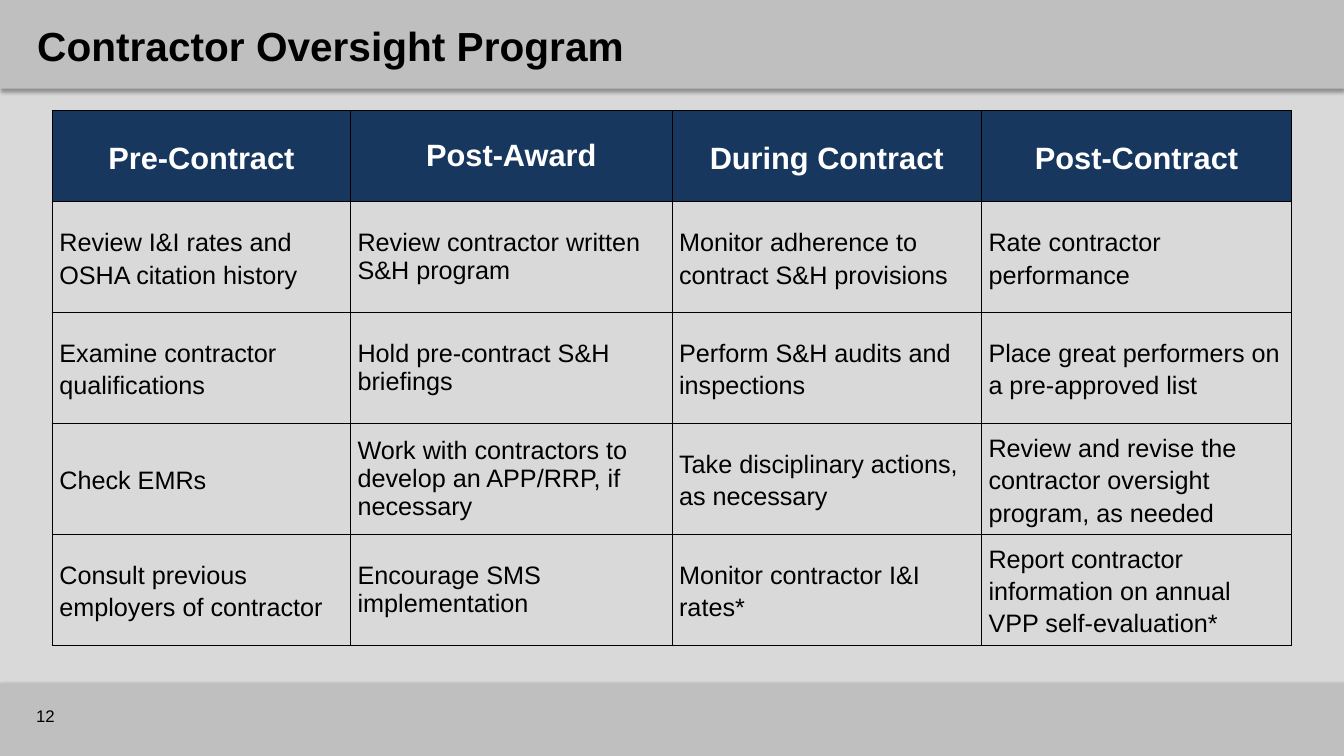
from dataclasses import dataclass
from typing import Any

from lxml import etree
from pptx import Presentation
from pptx.dml.color import RGBColor
from pptx.enum.shapes import MSO_SHAPE
from pptx.enum.text import MSO_ANCHOR, PP_ALIGN
from pptx.oxml import parse_xml
from pptx.oxml.ns import nsdecls, qn
from pptx.util import Pt

RECTANGLE = MSO_SHAPE.RECTANGLE
MIDDLE = MSO_ANCHOR.MIDDLE
LEFT = PP_ALIGN.LEFT
CENTER = PP_ALIGN.CENTER


@dataclass(frozen=True)
class Theme:
    font: str = "Arial"
    page: str = "D9D9D9"
    band: str = "BFBFBF"
    header: str = "17375E"
    ink: str = "000000"
    header_ink: str = "FFFFFF"
    title_size: float = 29
    header_size: float = 22
    body_size: float = 18
    number_size: float = 12


@dataclass(frozen=True)
class Box:
    left: float
    top: float
    width: float
    height: float

    def lengths(self) -> tuple[int, int, int, int]:
        return Pt(self.left), Pt(self.top), Pt(self.width), Pt(self.height)


@dataclass(frozen=True)
class Phase:
    name: str
    width: float
    line_spacing: float
    steps: tuple[str, ...]


THEME = Theme()
PAGE_WIDTH, PAGE_HEIGHT = 960, 540
HEADER_HEIGHT, STEP_HEIGHT = 64.8, 79.2
BORDER_WIDTH = 1
CELL_INSET = 5.04

BANDS = (Box(0, 488.2, PAGE_WIDTH, 51.8), Box(0, 0, PAGE_WIDTH, 63.4))
TITLE_BOX = Box(19.4, 10.1, 931, 44.6)
NUMBER_BOX = Box(18.7, 496.8, 72, 28.8)
TABLE_LEFT, TABLE_TOP = 37.4, 79.2

PHASES = (
    Phase("Pre-Contract", 213, 1.15, (
        "Review I&I rates and OSHA citation history",
        "Examine contractor qualifications",
        "Check EMRs",
        "Consult previous employers of contractor",
    )),
    Phase("Post-Award", 229.7, 1.0, (
        "Review contractor written S&H program",
        "Hold pre-contract S&H briefings",
        "Work with contractors to develop an APP/RRP, if necessary",
        "Encourage SMS implementation",
    )),
    Phase("During Contract", 221, 1.15, (
        "Monitor adherence to contract S&H provisions",
        "Perform S&H audits and inspections",
        "Take disciplinary actions, as necessary",
        "Monitor contractor I&I rates*",
    )),
    Phase("Post-Contract", 221.6, 1.15, (
        "Rate contractor performance",
        "Place great performers on a pre-approved list",
        "Review and revise the contractor oversight program, as needed",
        "Report contractor information on annual VPP self-evaluation*",
    )),
)


def apply(target: Any, formats: dict[str, Any]) -> None:
    for attribute, value in formats.items():
        setattr(target, attribute, value)


def write(frame: Any, text: str, size: float, color: str, bold: bool = False,
          align: Any = LEFT, line_spacing: float = 1.0) -> None:
    frame.text = text
    paragraph = frame.paragraphs[0]
    apply(paragraph, {"alignment": align, "line_spacing": line_spacing,
                      "space_before": Pt(0)})
    font = paragraph.runs[0].font
    apply(font, {"name": THEME.font, "size": Pt(size), "bold": bold})
    font.color.rgb = RGBColor.from_string(color)


def add_band(slide: Any, box: Box) -> None:
    band = slide.shapes.add_shape(RECTANGLE, *box.lengths())
    band.fill.solid()
    band.fill.fore_color.rgb = RGBColor.from_string(THEME.band)
    band.line.fill.background()
    band.shadow.inherit = False
    effects = band._element.spPr.find(qn("a:effectLst"))
    effects.append(parse_xml(
        f'<a:outerShdw {nsdecls("a")} blurRad="{Pt(3.1)}" dist="{Pt(1.8)}" '
        f'dir="5400000" rotWithShape="0"><a:srgbClr val="{THEME.ink}">'
        '<a:alpha val="35000"/></a:srgbClr></a:outerShdw>'))


def add_title(slide: Any, text: str) -> None:
    title = slide.shapes.title
    slide.shapes._spTree.append(title._element)
    apply(title, dict(zip(("left", "top", "width", "height"), TITLE_BOX.lengths())))
    apply(title.text_frame, {"vertical_anchor": MIDDLE, "word_wrap": True})
    write(title.text_frame, text, THEME.title_size, THEME.ink, bold=True)


def add_page_number(slide: Any, number: str) -> None:
    frame = slide.shapes.add_textbox(*NUMBER_BOX.lengths()).text_frame
    apply(frame, {"vertical_anchor": MIDDLE, "word_wrap": True})
    write(frame, number, THEME.number_size, THEME.ink)


def add_borders(cell: Any) -> None:
    properties = cell._tc.get_or_add_tcPr()
    for side in ("a:lnL", "a:lnR", "a:lnT", "a:lnB"):
        border = etree.SubElement(properties, qn(side), w=str(Pt(BORDER_WIDTH)))
        fill = etree.SubElement(border, qn("a:solidFill"))
        etree.SubElement(fill, qn("a:srgbClr"), val=THEME.ink)


def fill_cell(cell: Any, text: str, phase: Phase, is_header: bool) -> None:
    apply(cell, {"margin_left": Pt(CELL_INSET), "margin_right": Pt(CELL_INSET),
                 "margin_top": 0, "margin_bottom": 0, "vertical_anchor": MIDDLE})
    add_borders(cell)
    if is_header:
        cell.fill.solid()
        cell.fill.fore_color.rgb = RGBColor.from_string(THEME.header)
        write(cell.text_frame, text, THEME.header_size, THEME.header_ink,
              True, CENTER, phase.line_spacing)
    else:
        cell.fill.background()
        write(cell.text_frame, text, THEME.body_size, THEME.ink,
              line_spacing=phase.line_spacing)


def add_phase_table(slide: Any) -> None:
    heights = [HEADER_HEIGHT] + [STEP_HEIGHT] * len(PHASES[0].steps)
    box = Box(TABLE_LEFT, TABLE_TOP, sum(phase.width for phase in PHASES), sum(heights))
    table = slide.shapes.add_table(len(heights), len(PHASES), *box.lengths()).table
    table.horz_banding = False
    for row, height in zip(table.rows, heights):
        row.height = Pt(height)
    for column, phase in enumerate(PHASES):
        table.columns[column].width = Pt(phase.width)
        for row, text in enumerate((phase.name, *phase.steps)):
            fill_cell(table.cell(row, column), text, phase, row == 0)


def main() -> None:
    deck = Presentation()
    apply(deck, {"slide_width": Pt(PAGE_WIDTH), "slide_height": Pt(PAGE_HEIGHT)})
    slide = deck.slides.add_slide(deck.slide_layouts.get_by_name("Title Only"))
    slide.background.fill.solid()
    slide.background.fill.fore_color.rgb = RGBColor.from_string(THEME.page)
    for band in BANDS:
        add_band(slide, band)
    add_title(slide, "Contractor Oversight Program")
    add_page_number(slide, "12")
    add_phase_table(slide)
    deck.save("out.pptx")


if __name__ == "__main__":
    main()
